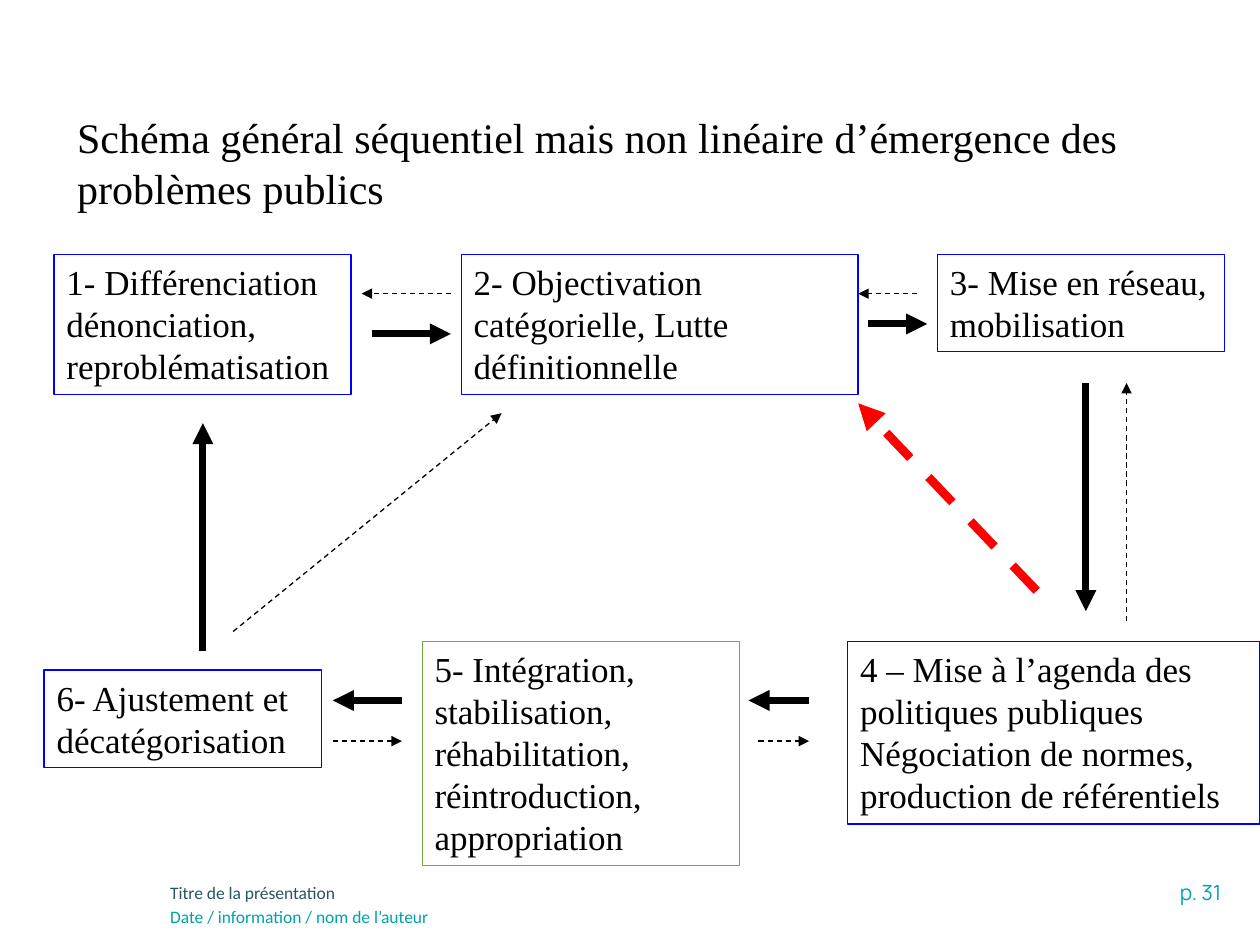
import pptx
import pptx.util
import pptx.dml.color
import pptx.enum.dml
import pptx.enum.shapes
import pptx.enum.text
import pptx.oxml.ns
from dataclasses import dataclass
from lxml import etree

Cm, Pt = pptx.util.Cm, pptx.util.Pt
Align, Anchor = pptx.enum.text.PP_ALIGN, pptx.enum.text.MSO_ANCHOR
Auto = pptx.enum.text.MSO_AUTO_SIZE


@dataclass(frozen=True)
class Theme:
    """Hold the colours, fonts and sizes of the slide."""
    ink: str = "000000"
    blue: str = "0000FF"
    green: str = "70AD47"
    red: str = "FF0000"
    teal: str = "00A3A6"
    slate: str = "275662"
    serif: str = "Times New Roman"
    sans: str = "Calibri"
    page: str = "Manrope"
    head: int = 24
    body: int = 20
    num: int = 12
    foot: int = 10


THEME = Theme()

STEPS = [
    ("1- Différenciation dénonciation, reproblématisation",
     (1.09, 5.13, 5.99, 2.82), THEME.blue, 0.75),
    ("2- Objectivation catégorielle, Lutte définitionnelle",
     (9.3, 5.13, 8, 2.82), THEME.blue, 0.75),
    ("3- Mise en réseau, mobilisation",
     (18.9, 5.13, 5.79, 1.96), THEME.blue, 0.75),
    ("4 – Mise à l’agenda des politiques publiques Négociation de normes, "
     "production de référentiels", (17.09, 12.93, 8.31, 3.68), THEME.blue, 0.75),
    ("5- Intégration, stabilisation, réhabilitation, réintroduction, appropriation",
     (8.51, 12.93, 6.4, 4.52), THEME.green, 0.25),
    ("6- Ajustement et décatégorisation",
     (0.89, 13.51, 5.59, 1.96), THEME.blue, 0.75),
]

MAIN = [
    (7.49, 6.73, 9.09, 6.73), (17.5, 6.53, 18.69, 6.53),
    (21.89, 7.72, 21.89, 12.32), (16.31, 14.12, 15.09, 14.12),
    (8.1, 14.12, 6.71, 14.12), (4.09, 13.13, 4.09, 8.53),
]

BACK = [
    (9.09, 5.92, 7.29, 5.92), (18.49, 5.92, 17.3, 5.92),
    (22.71, 12.52, 22.71, 7.72), (15.29, 14.94, 16.31, 14.94),
    (6.71, 14.94, 8.1, 14.94), (4.7, 12.73, 10.11, 8.33),
]

LEAP = (20.9, 11.91, 17.3, 8.13)


def rgb(code):
    """Turn a hex code into a colour."""
    return pptx.dml.color.RGBColor.from_string(code)


def apply(item, values):
    """Set each named value on the item."""
    for name, value in values.items():
        setattr(item, name, value)


def write(shape, text, font, size, color, align=Align.LEFT):
    """Put one styled paragraph in the shape."""
    frame = shape.text_frame
    frame.text = text
    apply(frame, {"word_wrap": True, "auto_size": Auto.NONE,
                  "vertical_anchor": Anchor.TOP})
    para = frame.paragraphs[0]
    para.alignment = align
    apply(para.font, {"name": font, "size": Pt(size)})
    para.font.color.rgb = rgb(color)


def title(slide, text, place):
    """Move and fill the title placeholder."""
    shape = slide.shapes.title
    apply(shape, dict(zip(("left", "top", "width", "height"), map(Cm, place))))
    write(shape, text, THEME.serif, THEME.head, THEME.ink)


def step(slide, text, place, color, width):
    """Draw one outlined step box."""
    kind = pptx.enum.shapes.MSO_SHAPE.RECTANGLE
    shape = slide.shapes.add_shape(kind, *map(Cm, place))
    shape.shadow.inherit = False
    shape.fill.background()
    shape.line.color.rgb = rgb(color)
    shape.line.width = Pt(width)
    write(shape, text, THEME.serif, THEME.body, THEME.ink)


def arrow(slide, ends, color, width, dash=False):
    """Draw one straight arrow between two points."""
    kind = pptx.enum.shapes.MSO_CONNECTOR.STRAIGHT
    link = slide.shapes.add_connector(kind, *map(Cm, ends))
    link.line.color.rgb = rgb(color)
    link.line.width = Pt(width)
    if dash:
        link.line.dash_style = pptx.enum.dml.MSO_LINE.DASH
    qn = pptx.oxml.ns.qn
    props = link._element.spPr
    etree.SubElement(props.find(qn("a:ln")), qn("a:tailEnd"), type="triangle")
    etree.SubElement(props, qn("a:effectLst"))


def label(slide, text, place, *style):
    """Add one footer text box."""
    write(slide.shapes.add_textbox(*map(Cm, place)), text, *style)


def main():
    """Build and save the slide."""
    deck = pptx.Presentation()
    apply(deck, {"slide_width": Cm(25.4), "slide_height": Cm(19.05)})
    slide = deck.slides.add_slide(deck.slide_layouts[5])
    title(slide, "Schéma général séquentiel mais non linéaire d’émergence "
          "des problèmes publics", (1.3, 2.13, 21.79, 2.31))
    label(slide, "p. 31", (19.08, 17.6, 5.79, 0.76),
          THEME.page, THEME.num, THEME.teal, Align.RIGHT)
    label(slide, "Titre de la présentation", (3.18, 17.65, 18.64, 0.71),
          THEME.sans, THEME.foot, THEME.slate)
    label(slide, "Date / information / nom de l’auteur", (3.18, 18.14, 18.64, 0.71),
          THEME.sans, THEME.foot, THEME.teal)
    for item in STEPS:
        step(slide, *item)
    for ends in MAIN:
        arrow(slide, ends, THEME.ink, 4)
    for ends in BACK:
        arrow(slide, ends, THEME.ink, 0.75, dash=True)
    arrow(slide, LEAP, THEME.red, 5, dash=True)
    deck.save("out.pptx")


if __name__ == "__main__":
    main()
